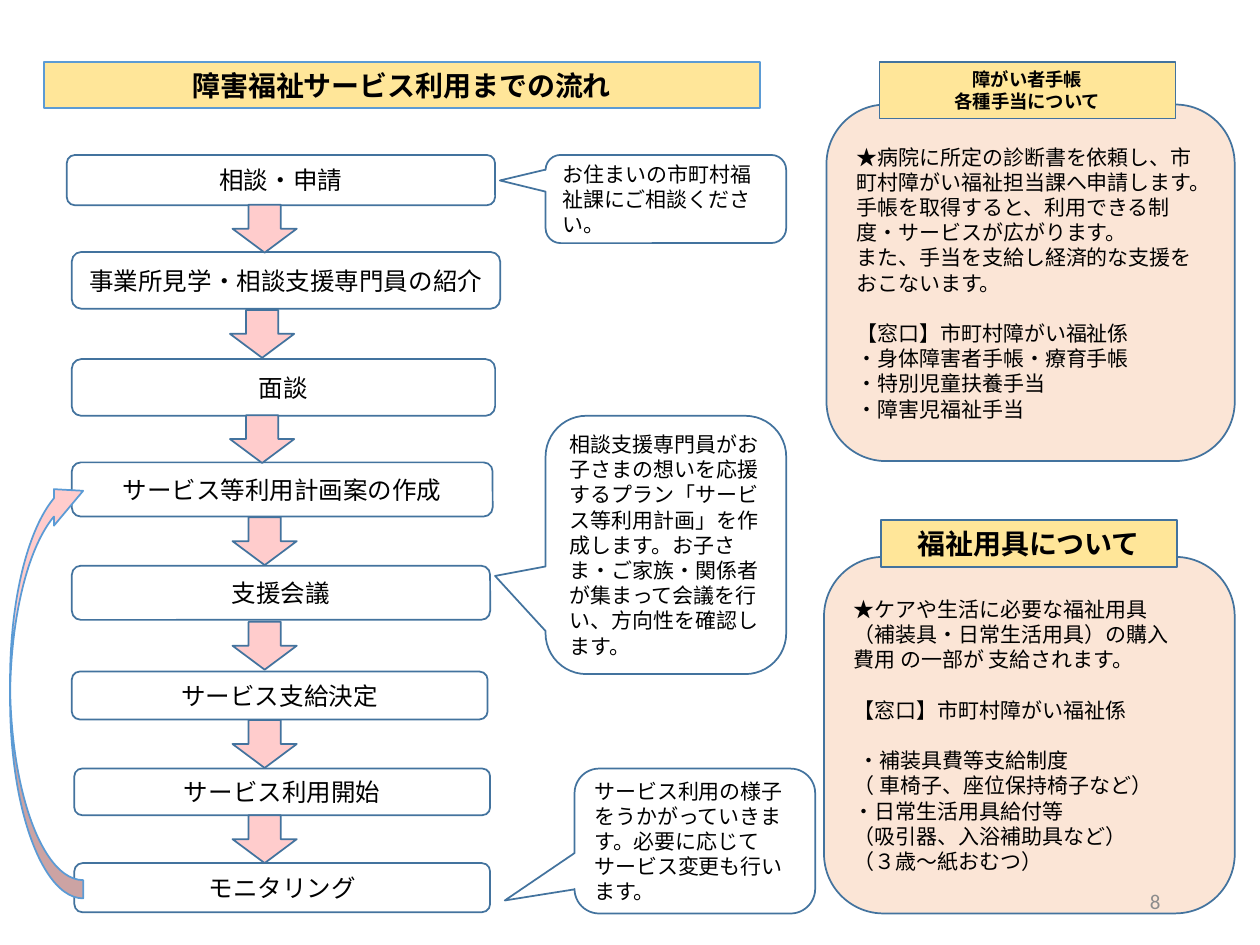
"""Build a slide on the steps leading to disability welfare services."""
import pptx
import pptx.dml.color
import pptx.enum.shapes
import pptx.enum.text
import pptx.util

Inches = pptx.util.Inches
Pt = pptx.util.Pt
SHAPE = pptx.enum.shapes.MSO_SHAPE
ALIGN = pptx.enum.text.PP_ALIGN
ANCHOR = pptx.enum.text.MSO_ANCHOR

BLACK, GRAY = "000000", "8C8C8C"
NAVY, BLUE = "43739E", "5B9BD5"
YELLOW, PEACH, PINK = "FFE699", "FBE5D6", "FFCCCC"

ARROW_LENGTH, ARROW_WIDTH = 0.38, 0.51

TITLE = "障害福祉サービス利用までの流れ"

# Each step: text, box, and left edge of the arrow that leads to the next step
STEPS = [
    ("相談・申請", (0.53, 1.23, 3.4, 0.4), 1.91),
    ("事業所見学・相談支援専門員の紹介", (0.57, 2, 3.4, 0.45), 1.89),
    ("面談", (0.57, 2.85, 3.36, 0.45), 1.89),
    ("サービス等利用計画案の作成", (0.57, 3.67, 3.34, 0.43), 1.91),
    ("支援会議", (0.57, 4.49, 3.32, 0.43), 1.91),
    ("サービス支給決定", (0.57, 5.33, 3.3, 0.38), 1.91),
    ("サービス利用開始", (0.59, 6.1, 3.3, 0.37), 1.91),
    ("モニタリング", (0.59, 6.85, 3.3, 0.39), None),
]

CALLOUTS = [
    ("お住まいの市町村福祉課にご相談ください。", (4.33, 1.23, 1.91, 0.7), (-0.69, -0.21)),
    ("相談支援専門員がお子さまの想いを応援するプラン「サービス等利用計画」を作成します。"
     "お子さま・ご家族・関係者が集まって会議を行い、方向性を確認します。",
     (4.33, 3.3, 1.91, 2.05), (-0.71, 0.12)),
    ("サービス利用の様子をうかがっていきます。必要に応じてサービス変更も行います。",
     (4.56, 6.1, 1.91, 1.15), (-0.79, 0.41)),
]

# Each panel: heading lines, heading size, heading box, body box, body groups
PANELS = [
    (["障がい者手帳", "各種手当について"], 10.5, (6.98, 0.49, 2.35, 0.45), (6.56, 0.83, 3.24, 2.83), [
        ["★病院に所定の診断書を依頼し、市町村障がい福祉担当課へ申請します。",
         "手帳を取得すると、利用できる制度・サービスが広がります。",
         "また、手当を支給し経済的な支援をおこないます。"],
        ["【窓口】市町村障がい福祉係", "・身体障害者手帳・療育手帳", "・特別児童扶養手当", "・障害児福祉手当"],
    ]),
    (["福祉用具について"], 16, (6.99, 4.13, 2.35, 0.37), (6.54, 4.42, 3.26, 2.83), [
        ["★ケアや生活に必要な福祉用具", "（補装具・日常生活用具）の購入", "費用 の一部が 支給されます。"],
        ["【窓口】市町村障がい福祉係"],
        [" ・補装具費等支給制度", "（ 車椅子、座位保持椅子など）", "・日常生活用具給付等",
         "（吸引器、入浴補助具など）", "（３歳～紙おむつ）"],
    ]),
]


def color(value):
    """Return the colour for a hex string."""
    return pptx.dml.color.RGBColor.from_string(value)


def apply(target, values):
    """Set attributes of a target from a dict."""
    for name, value in values.items():
        setattr(target, name, value)


def place(shape, box):
    """Move and size a shape to a box in inches."""
    apply(shape, dict(zip(("left", "top", "width", "height"), map(Inches, box))))


def paint(shape, fill, line):
    """Set the fill and outline of a shape."""
    if fill:
        shape.fill.solid()
        shape.fill.fore_color.rgb = color(fill)
    else:
        shape.fill.background()
    shape.line.color.rgb = color(line)
    shape.line.width = Pt(1)


def write(shape, groups, size, align=ALIGN.LEFT, anchor=ANCHOR.MIDDLE, bold=False, ink=BLACK):
    """Write groups of paragraphs, with a one-line gap between groups."""
    frame = shape.text_frame
    apply(frame, {"word_wrap": True, "auto_size": pptx.enum.text.MSO_AUTO_SIZE.NONE,
                  "vertical_anchor": anchor})
    frame.text = "\n".join(line for group in groups for line in group)
    starts = [sum(map(len, groups[:index])) for index in range(1, len(groups))]
    for index, paragraph in enumerate(frame.paragraphs):
        gap = Pt(size * 1.2) if index in starts else Pt(0)
        apply(paragraph, {"alignment": align, "space_before": gap})
        for run in paragraph.runs:
            apply(run.font, {"name": "Calibri", "size": Pt(size), "bold": bold})
            run.font.color.rgb = color(ink)


def add_shape(slide, kind, box, fill=None, line=NAVY, rotation=0, adjustments=()):
    """Add a flat preset shape."""
    shape = slide.shapes.add_shape(kind, *map(Inches, box))
    shape.shadow.inherit = False
    shape.rotation = rotation
    for index, value in enumerate(adjustments):
        shape.adjustments[index] = value
    paint(shape, fill, line)
    return shape


def add_title(slide):
    """Format the title placeholder as a yellow banner."""
    title = slide.shapes.title
    place(title, (0.35, 0.49, 5.68, 0.37))
    paint(title, YELLOW, BLUE)
    write(title, [[TITLE]], 16, ALIGN.CENTER, ANCHOR.TOP, True)


def add_steps(slide):
    """Add the step boxes with an arrow centred in each gap."""
    for text, box, _ in STEPS:
        write(add_shape(slide, SHAPE.ROUNDED_RECTANGLE, box), [[text]], 14, ALIGN.CENTER)
    for (_, box, left), (_, following, _) in zip(STEPS, STEPS[1:]):
        middle = (box[1] + box[3] + following[1]) / 2
        arrow_box = (left, middle - ARROW_WIDTH / 2, ARROW_LENGTH, ARROW_WIDTH)
        add_shape(slide, SHAPE.RIGHT_ARROW, arrow_box, PINK, rotation=90)


def add_callout(slide, text, box, tip):
    """Add a speech balloon that points at a step."""
    callout = add_shape(slide, SHAPE.ROUNDED_RECTANGULAR_CALLOUT, box, adjustments=(*tip, 0.17))
    write(callout, [[text]], 12)


def add_panel(slide, heading, size, heading_box, body_box, groups):
    """Add a rounded panel with a heading on its top edge."""
    write(add_shape(slide, SHAPE.ROUNDED_RECTANGLE, body_box, PEACH), groups, 12)
    label = add_shape(slide, SHAPE.RECTANGLE, heading_box, YELLOW)
    write(label, [heading], size, ALIGN.CENTER, ANCHOR.TOP, True)


def add_page_number(slide):
    """Add the page number."""
    number = slide.shapes.add_textbox(*map(Inches, (7.06, 6.95, 2.25, 0.4)))
    write(number, [["8"]], 12, ALIGN.RIGHT, ink=GRAY)


def main():
    """Build and save the slide."""
    presentation = pptx.Presentation()
    apply(presentation, {"slide_width": Inches(10), "slide_height": Inches(7.5)})
    slide = presentation.slides.add_slide(presentation.slide_layouts[5])
    add_title(slide)
    add_steps(slide)
    for callout in CALLOUTS:
        add_callout(slide, *callout)
    for panel in PANELS:
        add_panel(slide, *panel)
    add_page_number(slide)
    add_shape(slide, SHAPE.CURVED_LEFT_ARROW, (0.08, 3.75, 0.58, 3.38), PINK, BLUE, 180, (0.25, 0.5, 0.4))
    presentation.save("out.pptx")


if __name__ == "__main__":
    main()
